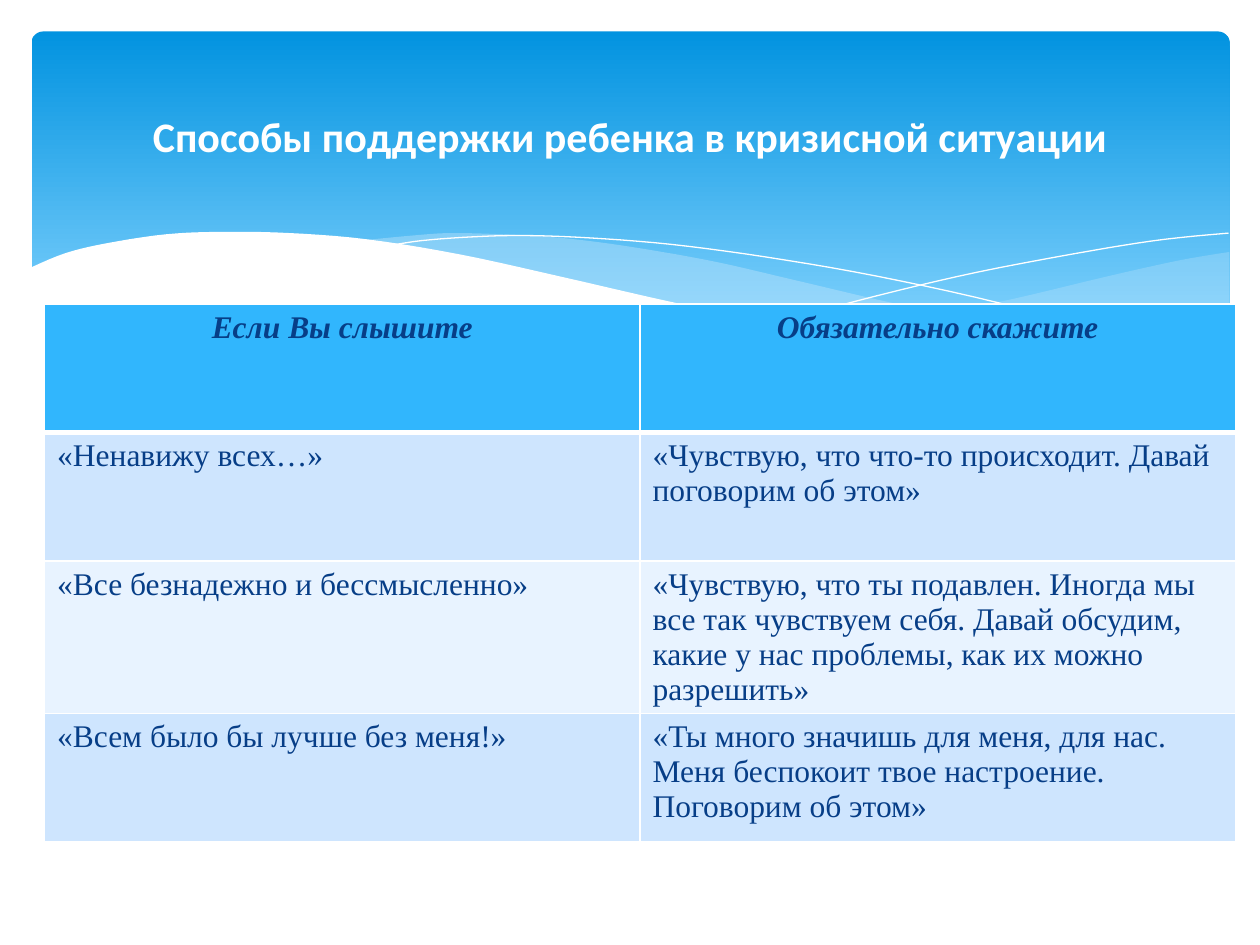
from lxml import etree
from pptx import Presentation
from pptx import util as u
from pptx.dml import color
from pptx.enum import shapes, text
from pptx.oxml import ns

Pt = u.Pt
WHITE, NAVY = "FFFFFF", "073E87"
HEAD, ODD, EVEN = "31B6FD", "CEE5FE", "E8F3FF"
FINE = 100  # outline steps per point

TITLE = "Способы поддержки ребенка в кризисной ситуации"
ROWS = [
    ("Если Вы слышите", "Обязательно скажите"),
    ("«Ненавижу всех…»",
     "«Чувствую, что что-то происходит. Давай поговорим об этом»"),
    ("«Все безнадежно и бессмысленно»",
     "«Чувствую, что ты подавлен. Иногда мы все так чувствуем себя. "
     "Давай обсудим, какие у нас проблемы, как их можно разрешить»"),
    ("«Всем было бы лучше без меня!»",
     "«Ты много значишь для меня, для нас. Меня беспокоит твое "
     "настроение. Поговорим об этом»"),
]

# Key points of each curve, in points
SIDE_TOP = [(702.5, 144), (673, 149), (631, 158.4), (580, 170.6),
            (525, 182), (476, 190.8)]
SIDE_LOW = [(476, 190.8), (517.7, 195.8), (553.7, 199.4), (586, 200.2),
            (615, 198.7), (646, 194.4), (673, 188.6), (702.5, 177.8)]
MID_TOP = [(643, 196.6), (602.6, 190.8), (558, 182.9), (508.3, 172.8),
           (452.9, 159.8), (409.7, 149.8), (370, 142.6), (334.8, 137.5),
           (302.4, 134.6), (260, 133.2), (236, 134.6), (206, 137.5)]
MID_LOW = [(206, 137.5), (246, 143.3), (291, 152), (353.5, 167),
           (407.5, 178.6), (456.5, 188), (500.4, 194.4), (538.6, 198.7),
           (573, 200.2), (610.6, 199.4), (643, 196.6)]
FALL = [(222.5, 140.4), (241, 137.5), (269.3, 135.4), (299.5, 134.6),
        (337.7, 136), (383.8, 139.7), (437.8, 146.9), (500.4, 157.7),
        (572.4, 173.5), (653, 195.8)]
RISE = [(441.4, 185), (500.4, 169.2), (558.7, 155.5), (623.5, 143.3),
        (665.3, 136.8), (702, 133.2)]
FRONT = [(703.4, 177), (676.8, 186.5), (647.3, 193.7), (612, 198),
         (582.5, 199.4), (548, 198), (495.4, 193), (434, 182.9),
         (381, 172), (321.8, 158.4), (262.8, 145.4), (210, 136.8),
         (165.6, 133.2), (127.4, 132.5), (95, 133.9), (61.2, 139),
         (37.4, 144.7), (16.5, 153.4)]
FLOOR = [(16.5, 237), (703.4, 237)]


def paint(code):
    return color.RGBColor.from_string(code)


def smooth(keys, steps=5):
    """Return points on a Catmull-Rom curve through the key points."""
    ends = [keys[0], *keys, keys[-1]]
    out = [keys[0]]
    for a, b, c, d in zip(ends, ends[1:], ends[2:], ends[3:]):
        for i in range(1, steps + 1):
            t = i / steps
            out.append(tuple(
                (2 * q + (r - p) * t + (2 * p - 5 * q + 4 * r - s) * t ** 2
                 + (3 * q - p - 3 * r + s) * t ** 3) / 2
                for p, q, r, s in zip(a, b, c, d)))
    return out


class Deck:
    """Holds the style and the current slide."""

    def __init__(self):
        self.show = Presentation()
        self.show.slide_width, self.show.slide_height = Pt(720), Pt(540)
        self.slide = self.show.slides.add_slide(self.show.slide_layouts[6])
        self.items = self.slide.shapes

    def label(self, para, words, size, face, hue, bold=False, slant=False):
        para.text = words
        font = para.font
        font.size, font.name, font.bold, font.italic = Pt(size), face, bold, slant
        font.color.rgb = paint(hue)

    def banner(self, x, y, w, h, top, low):
        box = self.items.add_shape(shapes.MSO_SHAPE.ROUNDED_RECTANGLE,
                                   Pt(x), Pt(y), Pt(w), Pt(h))
        box.adjustments[0] = 0.034
        box.shadow.inherit = False
        box.line.fill.background()
        box.fill.gradient()
        box.fill.gradient_angle = 270
        for stop, at, hue in zip(box.fill.gradient_stops, (0, 0.9), (top, low)):
            stop.position, stop.color.rgb = at, paint(hue)

    def trace(self, points, close):
        grid = [(x * FINE, y * FINE) for x, y in points]
        pen = self.items.build_freeform(*grid[0], scale=Pt(1) / FINE)
        pen.add_line_segments(grid[1:], close=close)
        form = pen.convert_to_shape()
        form.shadow.inherit = False
        return form

    def wave(self, points, hue, alpha=100):
        form = self.trace(points, True)
        form.line.fill.background()
        form.fill.solid()
        form.fill.fore_color.rgb = paint(hue)
        if alpha < 100:
            tint = form.element.spPr.find(".//" + ns.qn("a:srgbClr"))
            etree.SubElement(tint, ns.qn("a:alpha"), val=str(alpha * 1000))

    def thread(self, points, hue):
        form = self.trace(points, False)
        form.fill.background()
        form.line.color.rgb = paint(hue)
        form.line.width = Pt(0)

    def title(self, words, x, y, w, h):
        frame = self.items.add_textbox(Pt(x), Pt(y), Pt(w), Pt(h)).text_frame
        frame.word_wrap = True
        frame.vertical_anchor = text.MSO_ANCHOR.MIDDLE
        para = frame.paragraphs[0]
        para.alignment = text.PP_ALIGN.CENTER
        self.label(para, words, 24, "Calibri", WHITE, bold=True)

    def edge(self, cell, sides):
        """Draw white cell borders from a map of side to width."""
        props = cell._tc.get_or_add_tcPr()
        for side, wide in sides.items():
            line = etree.SubElement(props, ns.qn("a:ln" + side), w=str(Pt(wide)))
            fill = etree.SubElement(line, ns.qn("a:solidFill"))
            etree.SubElement(fill, ns.qn("a:srgbClr"), val=WHITE)

    def table(self, rows, x, y, w, tall):
        grid = self.items.add_table(len(rows), len(rows[0]), Pt(x), Pt(y),
                                    Pt(w), Pt(tall * len(rows))).table
        for i, row in enumerate(rows):
            head = i == 0
            for j, words in enumerate(row):
                cell = grid.cell(i, j)
                self.edge(cell, {"L": 1, "R": 1, "T": 3 if i == 1 else 1,
                                 "B": 3 if head else 1})
                cell.fill.solid()
                cell.fill.fore_color.rgb = paint(
                    HEAD if head else ODD if i % 2 else EVEN)
                para = cell.text_frame.paragraphs[0]
                if head:
                    para.alignment = text.PP_ALIGN.CENTER
                self.label(para, words, 18, "Times New Roman", NAVY, head, head)


def main():
    deck = Deck()
    deck.banner(18, 18, 684.7, 194.4, "0293E0", "83D3FE")
    deck.wave(smooth(SIDE_TOP) + smooth(SIDE_LOW), "C6E7FC", 29)
    deck.wave(smooth(MID_TOP) + smooth(MID_LOW), "C6E7FC", 40)
    deck.thread(smooth(FALL), WHITE)
    deck.thread(smooth(RISE), WHITE)
    deck.wave(smooth(FRONT) + FLOOR, WHITE)
    deck.table(ROWS, 25.5, 173.7, 680.4, 73.5)
    deck.title(TITLE, 36, 26.6, 648, 101.5)
    deck.show.save("out.pptx")


if __name__ == "__main__":
    main()
